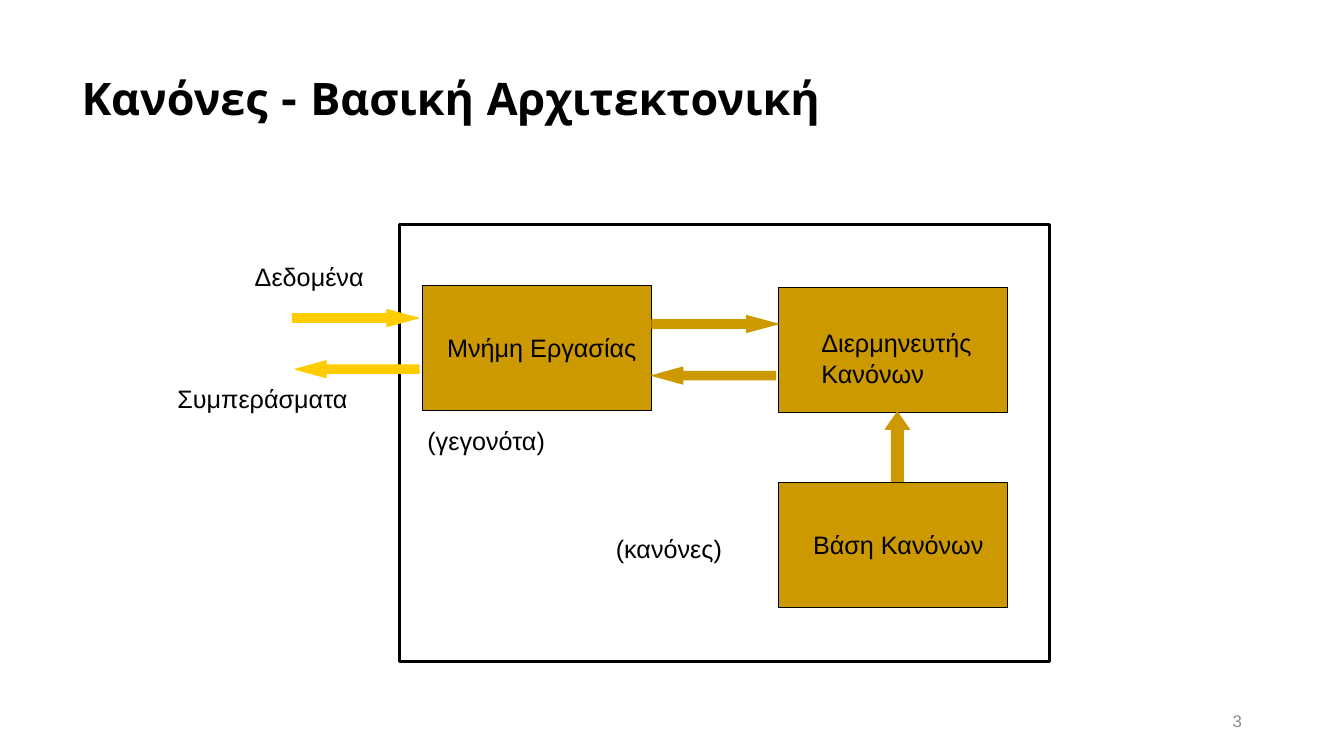
from pptx import Presentation
from pptx.dml.color import RGBColor
from pptx.enum.shapes import MSO_SHAPE
from pptx.enum.text import MSO_ANCHOR, PP_ALIGN
from pptx.util import Cm, Pt

COLORS = {"ink": "000000", "gold": "CC9900", "sun": "FFCC00", "grey": "8C8C8C"}
TITLE = {"name": "Montserrat", "size": Pt(32), "bold": True}
LABEL = {"name": "Arial", "size": Pt(18)}
NUMBER = {"name": "Arial", "size": Pt(12)}

BOX_SIZE = (5.77, 3.15)
BOXES = [(10.64, 7.19), (19.61, 7.24), (19.63, 12.17)]
LABELS = [
    ("Μνήμη Εργασίας", 11.02, 8.26, 5.64, 1.02),
    ("Διερμηνευτής Κανόνων", 20.45, 8.13, 4.45, 1.8),
    ("Βάση Κανόνων", 20.24, 13.21, 4.95, 1.02),
    ("Δεδομένα", 6.17, 6.45, 3.94, 1.02),
    ("Συμπεράσματα", 4.22, 9.53, 6.22, 1.02),
    ("(κανόνες)", 15.27, 13.31, 4.27, 1.02),
    ("(γεγονότα)", 10.52, 10.59, 6.15, 1.02),
]
RIGHT, LEFT, UP = MSO_SHAPE.RIGHT_ARROW, MSO_SHAPE.LEFT_ARROW, MSO_SHAPE.UP_ARROW
ARROWS = [
    (RIGHT, "gold", 1.86, 16.43, 7.95, 3.18, 0.43),
    (LEFT, "gold", 1.82, 16.43, 9.25, 3.12, 0.43),
    (UP, "gold", 0.72, 22.31, 10.38, 0.61, 1.75),
    (RIGHT, "sun", 1.86, 7.37, 7.8, 3.18, 0.43),
    (LEFT, "sun", 1.82, 7.44, 9.09, 3.12, 0.43),
]


def color(name):
    return RGBColor.from_string(COLORS[name])


def set_text(shape, text, style, ink="ink", align=PP_ALIGN.LEFT, anchor=MSO_ANCHOR.TOP):
    frame = shape.text_frame
    frame.word_wrap = True
    frame.vertical_anchor = anchor
    para = frame.paragraphs[0]
    para.alignment = align
    run = para.add_run()
    run.text = text
    for key, value in style.items():
        setattr(run.font, key, value)
    run.font.color.rgb = color(ink)
    return para


def add_title(slide, text, *place):
    title = slide.shapes.title
    for key, value in zip(("left", "top", "width", "height"), place):
        setattr(title, key, Cm(value))
    para = set_text(title, text, TITLE, anchor=MSO_ANCHOR.MIDDLE)
    para.line_spacing = 0.9


def add_label(slide, text, *place, style=LABEL, **format):
    box = slide.shapes.add_textbox(*map(Cm, place))
    set_text(box, text, style, **format)


def add_block(slide, kind, place, fill=None, line="ink", width=0.75):
    block = slide.shapes.add_shape(kind, *map(Cm, place))
    block.shadow.inherit = False
    if fill:
        block.fill.solid()
        block.fill.fore_color.rgb = color(fill)
    else:
        block.fill.background()
    block.line.color.rgb = color(line)
    block.line.width = Pt(width)
    return block


def add_arrow(slide, kind, fill, head, *place):
    """Add a block arrow whose head length is a multiple of its thickness."""
    arrow = add_block(slide, kind, place, fill, fill)
    arrow.adjustments[0] = 0.5
    arrow.adjustments[1] = head


def main():
    deck = Presentation()
    deck.slide_width, deck.slide_height = Cm(33.87), Cm(19.05)
    slide = deck.slides.add_slide(deck.slide_layouts[5])

    add_title(slide, "Κανόνες - Βασική Αρχιτεκτονική", 1.8, 0.71, 29.21, 3.68)
    add_label(slide, "3", 23.93, 17.65, 7.62, 1.02, style=NUMBER, ink="grey",
              align=PP_ALIGN.RIGHT, anchor=MSO_ANCHOR.MIDDLE)
    add_block(slide, MSO_SHAPE.RECTANGLE, (10.06, 5.66, 16.38, 11.02), width=2.25)
    for spot in BOXES:
        add_block(slide, MSO_SHAPE.RECTANGLE, spot + BOX_SIZE, "gold")
    for arrow in ARROWS:
        add_arrow(slide, *arrow)
    for label in LABELS:
        add_label(slide, *label)

    deck.save("out.pptx")


if __name__ == "__main__":
    main()
